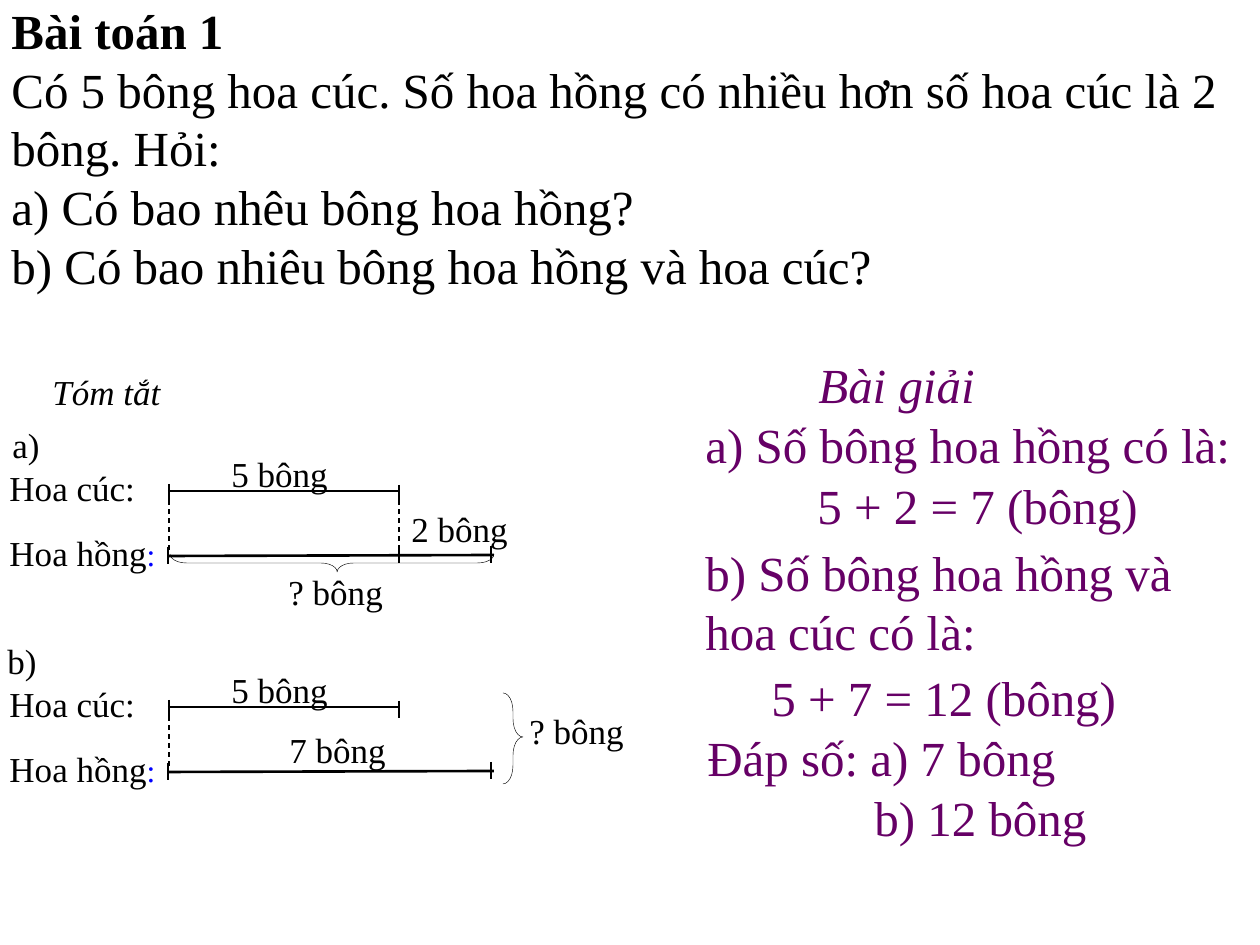
from dataclasses import dataclass

from lxml import etree
from pptx import Presentation
from pptx.dml.color import RGBColor
from pptx.enum.dml import MSO_LINE
from pptx.enum.shapes import MSO_CONNECTOR, MSO_SHAPE
from pptx.enum.text import MSO_AUTO_SIZE
from pptx.oxml.ns import qn
from pptx.util import Pt

EMU_PER_PX = 914400 / 126
STRAIGHT = MSO_CONNECTOR.STRAIGHT
RIGHT_BRACE = MSO_SHAPE.RIGHT_BRACE
DASH = MSO_LINE.DASH
GROW = MSO_AUTO_SIZE.SHAPE_TO_FIT_TEXT


@dataclass(frozen=True)
class Theme:
    font: str = "Times New Roman"
    ink: RGBColor = RGBColor(0, 0, 0)
    solution: RGBColor = RGBColor(0x66, 0, 0x66)
    colon: RGBColor = RGBColor(0, 0, 0xFF)
    body: int = 28
    label: int = 20
    small: int = 18
    bar: float = 1.5
    guide: float = 0.75
    brace: float = 0.25
    row_gap: float = 13.5


THEME = Theme()


def px(length):
    return round(length * EMU_PER_PX)


def add_run(paragraph, text, size, color=THEME.ink, bold=False, italic=False):
    run = paragraph.add_run()
    run.text = text
    font = run.font
    font.name, font.size, font.color.rgb = THEME.font, Pt(size), color
    font.bold, font.italic = bold, italic


def add_frame(slide, left, top, width, height):
    text_box = slide.shapes.add_textbox(px(left), px(top), px(width), px(height))
    frame = text_box.text_frame
    frame.word_wrap = True
    frame.auto_size = GROW
    return frame


def add_label(slide, text, left, top, width, height=55, size=THEME.label, **style):
    frame = add_frame(slide, left, top, width, height)
    add_run(frame.paragraphs[0], text, size, **style)


def add_line(slide, start, end, width=THEME.bar, dash=None):
    line = slide.shapes.add_connector(STRAIGHT, *map(px, (*start, *end)))
    line.line.color.rgb = THEME.ink
    line.line.width = Pt(width)
    if dash is not None:
        line.line.dash_style = dash
    etree.SubElement(line._element.spPr, qn("a:effectLst"))


def add_brace(slide, left, top, width, height, rotation=0):
    brace = slide.shapes.add_shape(RIGHT_BRACE, px(left), px(top), px(width), px(height))
    brace.rotation = rotation
    brace.adjustments[0], brace.adjustments[1] = 0.914, 0.484
    brace.shadow.inherit = False
    brace.fill.background()
    brace.line.color.rgb = THEME.ink
    brace.line.width = Pt(THEME.brace)


def add_problem(slide, left, top, width, height):
    frame = add_frame(slide, left, top, width, height)
    lines = (
        "Bài toán 1",
        "Có 5 bông hoa cúc. Số hoa hồng có nhiều hơn số hoa cúc là 2 bông. Hỏi:",
        "a) Có bao nhêu bông hoa hồng?",
        "b) Có bao nhiêu bông hoa hồng và hoa cúc?",
    )
    for index, text in enumerate(lines):
        paragraph = frame.add_paragraph() if index else frame.paragraphs[0]
        add_run(paragraph, text, THEME.body, bold=index == 0)


def add_bars(slide, left, top):
    """Draw the two flower bars with their names, end ticks and left guide."""
    names = add_frame(slide, left - 3, top + 43, 410, 122)
    daisy, rose = names.paragraphs[0], names.add_paragraph()
    add_run(daisy, "Hoa cúc:", THEME.label)
    add_run(rose, "Hoa hồng", THEME.label)
    add_run(rose, ":", THEME.small, THEME.colon)
    rose.space_before = Pt(THEME.row_gap)

    add_label(slide, "5 bông", left + 219, top + 29, 139)
    add_line(slide, (left + 168, top + 74), (left + 399, top + 74))
    add_line(slide, (left + 168, top + 139), (left + 494, top + 138))
    for x, y in ((169, 67), (399, 68), (168, 130), (491, 129)):
        add_tick(slide, left + x, top + y)
    add_guide(slide, left + 169, top + 74)


def add_tick(slide, x, y):
    add_line(slide, (x, y), (x, y + 17))


def add_guide(slide, x, y):
    add_line(slide, (x, y), (x, y + 63), THEME.guide, DASH)


def add_summary_a(slide, left, top):
    add_label(slide, "a)", left, top, 139)
    add_bars(slide, left, top)
    add_guide(slide, left + 399, top + 74)
    add_tick(slide, left + 399, top + 129)
    add_label(slide, "2 bông", left + 399, top + 84, 145)
    add_brace(slide, left + 323, top - 16, 18, 324, rotation=90)
    add_label(slide, "? bông", left + 276, top + 147, 155)


def add_summary_b(slide, left, top):
    add_label(slide, "b)", left - 5, top, 71)
    add_bars(slide, left, top)
    add_label(slide, "7 bông", left + 277, top + 89, 139)
    add_brace(slide, left + 503, top + 60, 20, 91)
    add_label(slide, "? bông", left + 517, top + 70, 155)


def add_solution(slide, left, top):
    lines = (
        ("Bài giải", 113, 0, 347, 72),
        ("a) Số bông hoa hồng có là:", 0, 60, 559, 72),
        ("5 + 2 = 7 (bông)", 112, 121, 412, 77),
        ("b) Số bông hoa hồng và hoa cúc có là:", 0, 188, 559, 131),
        ("5 + 7 = 12 (bông)", 66, 313, 412, 77),
        ("Đáp số: a) 7 bông", 2, 373, 497, 72),
        ("b) 12 bông", 169, 433, 330, 72),
    )
    for index, (text, x, y, width, height) in enumerate(lines):
        add_label(slide, text, left + x, top + y, width, height, THEME.body,
                  color=THEME.solution, italic=index == 0)


def main():
    presentation = Presentation()
    presentation.slide_width, presentation.slide_height = px(1260), px(945)
    slide = presentation.slides.add_slide(presentation.slide_layouts[6])
    add_problem(slide, -1, -6, 1254, 310)
    add_label(slide, "Tóm tắt", 40, 364, 222, italic=True)
    add_summary_a(slide, 0, 417)
    add_summary_b(slide, 0, 633)
    add_solution(slide, 693, 348)
    presentation.save("out.pptx")


if __name__ == "__main__":
    main()
